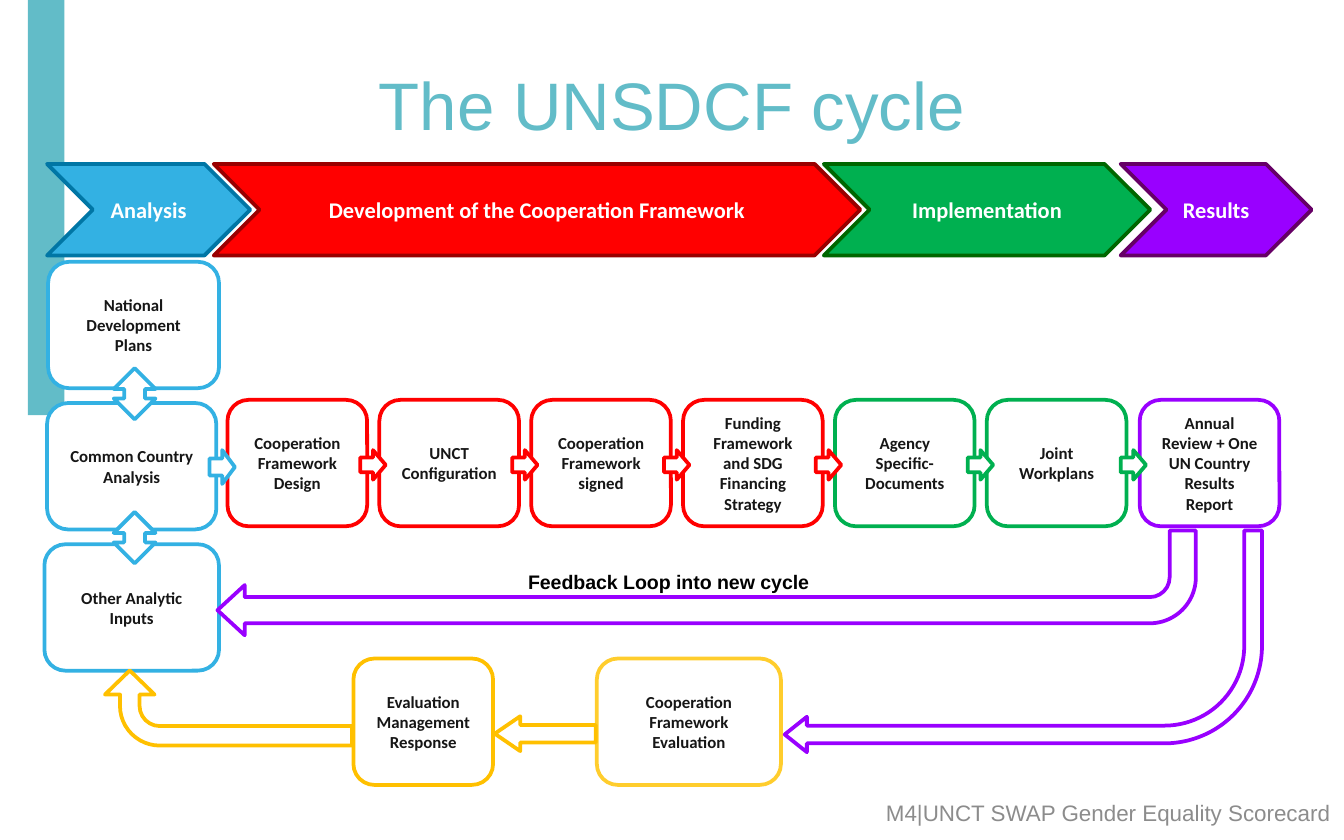
"""Build the UNSDCF cycle slide: phase chevrons, process boxes and feedback arrows."""
import pptx
import pptx.dml.color
import pptx.enum.shapes
import pptx.enum.text
import pptx.util

Cm = pptx.util.Cm
Pt = pptx.util.Pt
RGBColor = pptx.dml.color.RGBColor
SHAPE = pptx.enum.shapes.MSO_SHAPE
ALIGN = pptx.enum.text.PP_ALIGN
ANCHOR = pptx.enum.text.MSO_ANCHOR

WHITE = RGBColor(0xFF, 0xFF, 0xFF)
BLACK = RGBColor(0x00, 0x00, 0x00)
INK = RGBColor(0x16, 0x16, 0x16)
GREY = RGBColor(0x8C, 0x8C, 0x8C)
TEAL = RGBColor(0x62, 0xBC, 0xC8)
BLUE = RGBColor(0x33, 0xB1, 0xE3)
DARK_BLUE = RGBColor(0x00, 0x76, 0xA5)
RED = RGBColor(0xFF, 0x00, 0x00)
DARK_RED = RGBColor(0x99, 0x00, 0x00)
GREEN = RGBColor(0x00, 0xB0, 0x50)
DARK_GREEN = RGBColor(0x00, 0x66, 0x00)
PURPLE = RGBColor(0x99, 0x00, 0xFF)
DARK_PURPLE = RGBColor(0x66, 0x00, 0x66)
AMBER = RGBColor(0xFF, 0xC0, 0x00)
YELLOW = RGBColor(0xFF, 0xCD, 0x2D)

BOX_HEIGHT = 2.39
STEP_WIDTH = 2.64
STEP_TOP = 7.56
STEP_PITCH = 2.87
FIRST_STEP_LEFT = 4.3
ANALYSIS_TOP = 4.95
ANALYSIS_PITCH = 2.67
EVALUATION_TOP = 12.45

PHASES = [
    ("Analysis", 0.89, 3.84, BLUE, DARK_BLUE),
    ("Development of the Cooperation Framework", 4.04, 12.22, RED, DARK_RED),
    ("Implementation", 15.57, 6.17, GREEN, DARK_GREEN),
    ("Results", 21.18, 3.61, PURPLE, DARK_PURPLE),
]
ANALYSIS_INPUTS = [
    ("National Development Plans", 0.91, 3.23),
    ("Common Country Analysis", 0.89, 3.2),
    ("Other Analytic Inputs", 0.84, 3.3),
]
STEPS = [
    ("Cooperation Framework Design", RED),
    ("UNCT Configuration", RED),
    ("Cooperation Framework signed", RED),
    ("Funding Framework and SDG Financing Strategy", RED),
    ("Agency Specific-Documents", GREEN),
    ("Joint Workplans", GREEN),
]
REPORT_LEFT = 21.54


def write(frame, text, font_name, size, color, bold=False, align=ALIGN.CENTER):
    frame.word_wrap = True
    frame.vertical_anchor = ANCHOR.MIDDLE
    paragraph = frame.paragraphs[0]
    paragraph.text = text
    paragraph.alignment = align
    paragraph.font.name = font_name
    paragraph.font.size = Pt(size)
    paragraph.font.bold = bold
    paragraph.font.color.rgb = color


def add_outlined(slide, kind, place, fill, outline=None):
    outlined = slide.shapes.add_shape(kind, *map(Cm, place))
    outlined.shadow.inherit = False
    outlined.fill.solid()
    outlined.fill.fore_color.rgb = fill
    if outline is None:
        outlined.line.fill.background()
    else:
        outlined.line.color.rgb = outline
        outlined.line.width = Pt(2)
    return outlined


def add_box(slide, text, left, top, width, color):
    place = (left, top, width, BOX_HEIGHT)
    box = add_outlined(slide, SHAPE.ROUNDED_RECTANGLE, place, WHITE, color)
    write(box.text_frame, text, "Calibri", 9, INK, bold=True)


def add_phase(slide, text, left, width, fill, outline):
    phase = add_outlined(slide, SHAPE.CHEVRON, (left, 3.1, width, 1.73), fill, outline)
    write(phase.text_frame, text, "Calibri", 12, WHITE, bold=True)


def add_arrow(slide, kind, place, color, rotation=0, adjustments=()):
    arrow = add_outlined(slide, kind, place, WHITE, color)
    arrow.rotation = rotation
    for index, value in enumerate(adjustments):
        arrow.adjustments[index] = value


def add_label(slide, text, place, size, color, bold=False, align=ALIGN.CENTER):
    label = slide.shapes.add_textbox(*map(Cm, place))
    write(label.text_frame, text, "Arial", size, color, bold, align)


def add_process(slide):
    for row, (text, left, width) in enumerate(ANALYSIS_INPUTS):
        add_box(slide, text, left, ANALYSIS_TOP + row * ANALYSIS_PITCH, width, BLUE)
    step_lefts = [FIRST_STEP_LEFT + i * STEP_PITCH for i in range(len(STEPS))]
    for (text, color), left in zip(STEPS, step_lefts):
        add_box(slide, text, left, STEP_TOP, STEP_WIDTH, color)
    add_box(slide, "Annual Review + One UN Country Results Report",
            REPORT_LEFT, STEP_TOP, STEP_WIDTH, PURPLE)
    add_box(slide, "Evaluation Management Response",
            6.68, EVALUATION_TOP, STEP_WIDTH, AMBER)
    add_box(slide, "Cooperation Framework Evaluation",
            11.28, EVALUATION_TOP, 3.48, YELLOW)
    for phase in PHASES:
        add_phase(slide, *phase)

    add_arrow(slide, SHAPE.RIGHT_ARROW, (3.96, 8.51, 0.48, 0.64), BLUE)
    for (_, color), next_left in zip(STEPS, step_lefts[1:] + [REPORT_LEFT]):
        add_arrow(slide, SHAPE.RIGHT_ARROW, (next_left - 0.36, 8.51, 0.48, 0.56), color)
    for top in (6.96, 9.68):
        add_arrow(slide, SHAPE.UP_DOWN_ARROW, (2.15, top, 0.79, 0.97), BLUE)


def add_feedback(slide):
    add_arrow(slide, SHAPE.BENT_ARROW, (4.11, 10.03, 18.49, 1.98), PURPLE,
              180, (0.25, 0.24, 0.26, 0.44))
    add_arrow(slide, SHAPE.BENT_ARROW, (14.83, 10.03, 9.02, 4.19), PURPLE,
              180, (0.08, 0.08, 0.1, 0.44))
    add_arrow(slide, SHAPE.RIGHT_ARROW, (9.35, 13.54, 1.91, 0.66), AMBER,
              180, (0.5, 0.73))
    add_arrow(slide, SHAPE.BENT_ARROW, (3.61, 11.05, 1.42, 4.67), AMBER,
              270, (0.26, 0.33, 0.32, 0.53))
    add_label(slide, "Feedback Loop into new cycle", (9.73, 10.64, 5.94, 0.71),
              10.5, BLACK, bold=True, align=ALIGN.LEFT)


def main():
    deck = pptx.Presentation()
    deck.slide_width, deck.slide_height = Cm(25.4), Cm(15.88)
    slide = deck.slides.add_slide(deck.slide_layouts[6])
    add_outlined(slide, SHAPE.RECTANGLE, (0.53, 0, 0.69, 7.85), TEAL)
    add_process(slide)
    add_feedback(slide)
    add_label(slide, "The UNSDCF cycle", (1.27, 0.64, 22.86, 2.64), 36, TEAL)
    add_label(slide, "M4|UNCT SWAP Gender Equality Scorecard",
              (9.19, 14.86, 16.21, 1.02), 12, GREY, align=ALIGN.RIGHT)
    deck.save("out.pptx")


if __name__ == "__main__":
    main()
